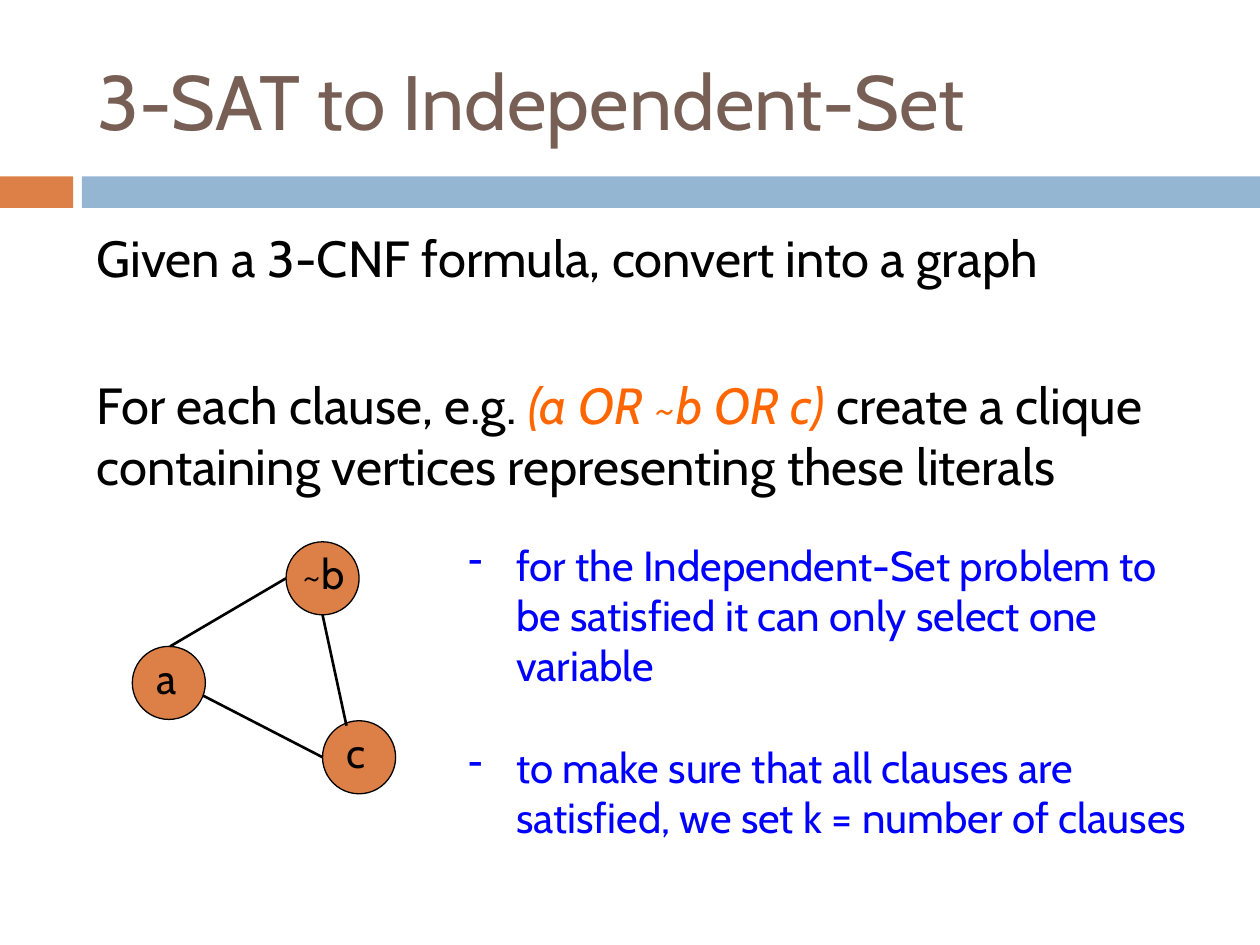
"""Build a slide on turning a 3-SAT formula into an Independent-Set graph."""
import lxml.etree
import pptx
import pptx.dml.color
import pptx.enum.shapes
import pptx.enum.text
import pptx.oxml.ns
import pptx.util

Inches = pptx.util.Inches
Pt = pptx.util.Pt

THEME = {
    "font": "Cabin", "title": 44, "body": 29, "note": 24,
    "brown": "775F55", "rust": "DD8047", "sky": "94B6D2",
    "black": "000000", "orange": "FF6600", "blue": "0000FF",
}

TITLE = "3-SAT to Independent-Set"
BODY = [
    [("Given a 3-CNF formula, convert into a graph", False)],
    [("For each clause, e.g. ", False), ("(a OR ~b OR c)", True),
     (" create a clique containing vertices representing these literals", False)],
]
NOTES = [
    "for the Independent-Set problem to be satisfied it can only select one variable",
    "to make sure that all clauses are satisfied, we set k = number of clauses",
]
BANDS = [(0, 0.58, "rust"), (0.65, 9.35, "sky")]
NODES = [("a", 1.05, 5.13, 0.09, 0.5), ("~b", 2.27, 4.3, 0.03, 0.84),
         ("c", 2.56, 5.72, 0.09, 0.5)]
EDGES = [(1.35, 5.13, 2.27, 4.59), (1.61, 5.52, 2.56, 6.01), (2.56, 4.88, 2.75, 5.76)]
NODE_SIZE = 0.58
BODY_GAP, NOTE_GAP = 49, 29
INDENT = 0.38


def color(name):
    return pptx.dml.color.RGBColor.from_string(THEME[name])


def style(font, size, tint):
    font.name = THEME["font"]
    font.size = Pt(THEME[size])
    font.color.rgb = color(tint)


def add_shape(slide, kind, box, fill, line=None):
    shape = slide.shapes.add_shape(kind, *map(Inches, box))
    shape.shadow.inherit = False
    shape.fill.solid()
    shape.fill.fore_color.rgb = color(fill)
    if line:
        shape.line.color.rgb = color(line)
        shape.line.width = Pt(0.75)
    else:
        shape.line.fill.background()


def add_frame(slide, box):
    frame = slide.shapes.add_textbox(*map(Inches, box)).text_frame
    frame.word_wrap = True
    return frame


def add_paras(frame, count, gap):
    for index in range(count):
        para = frame.add_paragraph() if index else frame.paragraphs[0]
        para.space_before = Pt(gap if index else 0)
        yield para


def add_title(slide):
    title = slide.shapes.title
    title.left, title.top, title.width, title.height = map(Inches, (0.67, 0.25, 8.92, 1.08))
    frame = title.text_frame
    frame.text = TITLE
    frame.auto_size = pptx.enum.text.MSO_AUTO_SIZE.NONE
    frame.vertical_anchor = pptx.enum.text.MSO_ANCHOR.MIDDLE
    para = frame.paragraphs[0]
    para.alignment = pptx.enum.text.PP_ALIGN.LEFT
    style(para.runs[0].font, "title", "brown")


def add_body(slide):
    frame = add_frame(slide, (0.67, 1.75, 8.92, 2.5))
    for para, parts in zip(add_paras(frame, len(BODY), BODY_GAP), BODY):
        for text, clause in parts:
            run = para.add_run()
            run.text = text
            run.font.italic = clause
            style(run.font, "body", "orange" if clause else "black")


def add_graph(slide):
    for text, left, top, shift, width in NODES:
        add_shape(slide, pptx.enum.shapes.MSO_SHAPE.OVAL,
                  (left, top, NODE_SIZE, NODE_SIZE), "rust", "black")
        frame = add_frame(slide, (left + shift, top, width, 0.5))
        frame.text = text
        style(frame.paragraphs[0].runs[0].font, "note", "black")
    for ends in EDGES:
        edge = slide.shapes.add_connector(
            pptx.enum.shapes.MSO_CONNECTOR.STRAIGHT, *map(Inches, ends))
        edge.line.color.rgb = color("black")
        edge.line.width = Pt(1.5)
        lxml.etree.SubElement(edge._element.spPr, pptx.oxml.ns.qn("a:effectLst"))


def add_notes(slide):
    frame = add_frame(slide, (3.62, 4.23, 5.96, 2.12))
    for para, text in zip(add_paras(frame, len(NOTES), NOTE_GAP), NOTES):
        para.text = text
        props = para._p.get_or_add_pPr()
        props.set("marL", str(Inches(INDENT)))
        props.set("indent", str(-Inches(INDENT)))
        bullet = lxml.etree.SubElement(props, pptx.oxml.ns.qn("a:buChar"))
        bullet.set("char", "-")
        style(para.runs[0].font, "note", "blue")


def main():
    deck = pptx.Presentation()
    deck.slide_width, deck.slide_height = Inches(10), Inches(7.5)
    slide = deck.slides.add_slide(deck.slide_layouts[5])
    for left, width, fill in BANDS:
        add_shape(slide, pptx.enum.shapes.MSO_SHAPE.RECTANGLE, (left, 1.4, width, 0.25), fill)
    add_title(slide)
    add_body(slide)
    add_graph(slide)
    add_notes(slide)
    deck.save("out.pptx")


if __name__ == "__main__":
    main()
